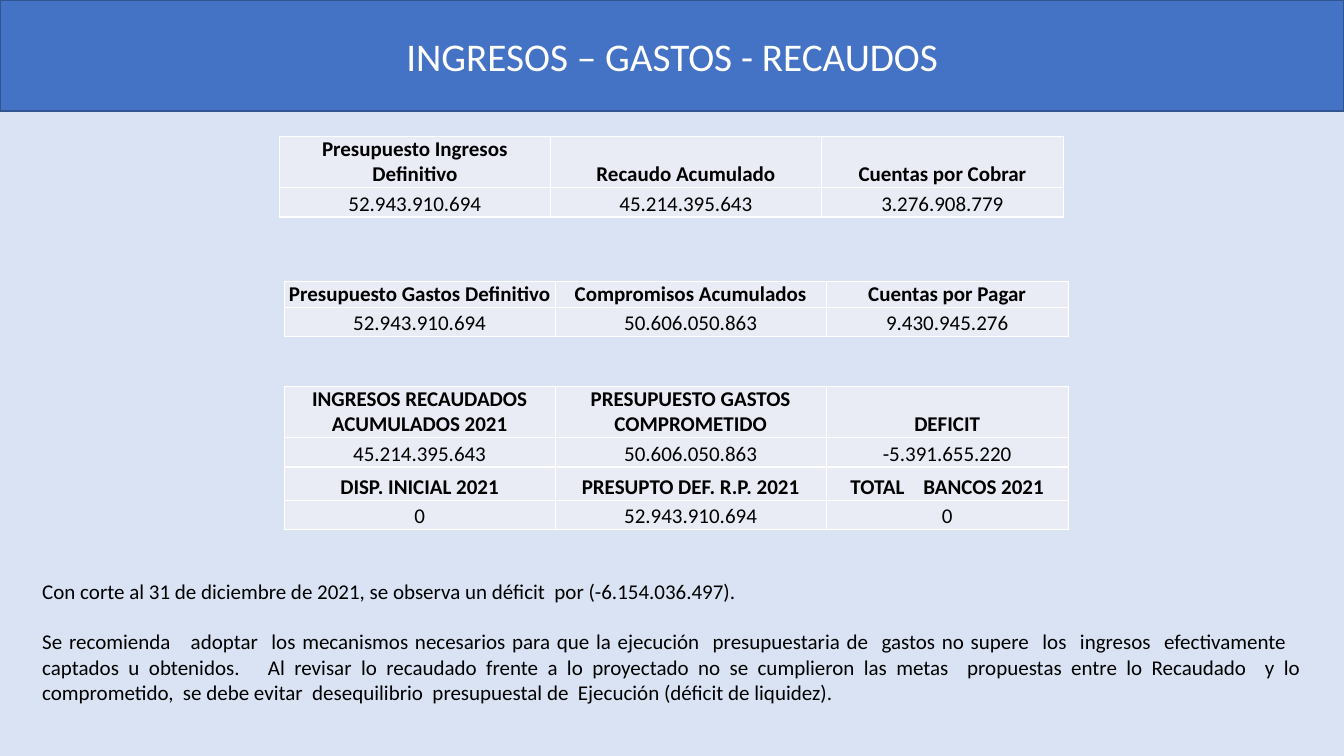
from lxml import etree
from pptx import Presentation
from pptx.dml.color import RGBColor
from pptx.enum.text import MSO_ANCHOR, MSO_AUTO_SIZE, PP_ALIGN
from pptx.oxml.ns import qn
from pptx.util import Cm, Pt

TITLE = "INGRESOS – GASTOS - RECAUDOS"
NOTES = [
    "Con corte al 31 de diciembre de 2021, se observa un déficit  por (-6.154.036.497).",
    "Se recomienda   adoptar  los mecanismos necesarios para que la ejecución  "
    "presupuestaria de  gastos no supere  los  ingresos  efectivamente   captados u "
    "obtenidos.   Al revisar lo recaudado frente a lo proyectado no se cumplieron las "
    "metas  propuestas entre lo Recaudado  y lo comprometido,  se debe evitar  "
    "desequilibrio  presupuestal de  Ejecución (déficit de liquidez).",
]
INCOME = [
    ("Presupuesto Ingresos Definitivo", "Recaudo Acumulado", "Cuentas por Cobrar"),
    ("52.943.910.694", "45.214.395.643", "3.276.908.779"),
]
EXPENSES = [
    ("Presupuesto Gastos Definitivo", "Compromisos Acumulados", "Cuentas por Pagar"),
    ("52.943.910.694", "50.606.050.863", "9.430.945.276"),
]
BALANCE = [
    ("INGRESOS RECAUDADOS ACUMULADOS 2021", "PRESUPUESTO GASTOS COMPROMETIDO", "DEFICIT"),
    ("45.214.395.643", "50.606.050.863", "-5.391.655.220"),
    ("DISP. INICIAL 2021", "PRESUPTO DEF. R.P. 2021", "TOTAL    BANCOS 2021"),
    ("0", "52.943.910.694", "0"),
]
TABLES = [
    (INCOME, 7.04, 3.43, (1.27, 0.74)),
    (EXPENSES, 7.16, 7.09, (0.64, 0.74)),
    (BALANCE, 7.16, 9.73, (1.27, 0.74, 0.84, 0.74)),
]
COLUMN_WIDTHS = (6.83, 6.83, 6.1)
PAGE_WIDTH, PAGE_HEIGHT = 33.87, 19.05

FONT = "Calibri"
BACKGROUND = RGBColor(0xDA, 0xE3, 0xF3)
BANNER = RGBColor(0x44, 0x72, 0xC4)
BANNER_EDGE = RGBColor(0x32, 0x54, 0x91)
CELL = RGBColor(0xE9, 0xEB, 0xF5)
WHITE = RGBColor(0xFF, 0xFF, 0xFF)
BLACK = RGBColor(0, 0, 0)
CENTER, JUSTIFY = PP_ALIGN.CENTER, PP_ALIGN.JUSTIFY
BOTTOM, MIDDLE, TOP = MSO_ANCHOR.BOTTOM, MSO_ANCHOR.MIDDLE, MSO_ANCHOR.TOP
NO_AUTOFIT = MSO_AUTO_SIZE.NONE


def place(box, left, top, width, height):
    box.left, box.top, box.width, box.height = map(Cm, (left, top, width, height))


def format_para(para, size, color, alignment, bold=False):
    para.alignment = alignment
    font = para.font
    font.name, font.size, font.bold = FONT, Pt(size), bold
    font.color.rgb = color


def add_borders(cell):
    properties = cell._tc.get_or_add_tcPr()
    for side in ("lnL", "lnR", "lnT", "lnB"):
        line = etree.SubElement(properties, qn(f"a:{side}"), w=str(Pt(1)))
        fill = etree.SubElement(line, qn("a:solidFill"))
        etree.SubElement(fill, qn("a:srgbClr"), val=str(WHITE))


def add_budget_table(page, rows, left, top, heights):
    frame = page.shapes.add_table(
        len(rows), len(COLUMN_WIDTHS), Cm(left), Cm(top),
        Cm(sum(COLUMN_WIDTHS)), Cm(sum(heights)))
    table = frame.table
    table.first_row = table.horz_banding = False
    for column, width in zip(table.columns, COLUMN_WIDTHS):
        column.width = Cm(width)
    for index, (row, height, texts) in enumerate(zip(table.rows, heights, rows)):
        row.height = Cm(height)
        for cell, text in zip(row.cells, texts):
            cell.text = text
            cell.vertical_anchor = BOTTOM
            cell.margin_left = cell.margin_right = 0
            cell.margin_top = cell.margin_bottom = 0
            format_para(cell.text_frame.paragraphs[0], 15, BLACK, CENTER, index % 2 == 0)
            add_borders(cell)
            cell.fill.solid()
            cell.fill.fore_color.rgb = CELL


def add_title(title):
    place(title, 0, 0, PAGE_WIDTH, 2.8)
    title.fill.solid()
    title.fill.fore_color.rgb = BANNER
    title.line.color.rgb = BANNER_EDGE
    title.line.width = Pt(1)
    title.text_frame.text = TITLE
    title.text_frame.vertical_anchor = MIDDLE
    title.text_frame.auto_size = NO_AUTOFIT
    format_para(title.text_frame.paragraphs[0], 28, WHITE, CENTER)


def add_notes(body):
    place(body, 0.81, 14.45, 32.23, 3.45)
    frame = body.text_frame
    frame.text = "\n".join(NOTES)
    frame.vertical_anchor = TOP
    frame.auto_size = NO_AUTOFIT
    for index, para in enumerate(frame.paragraphs):
        format_para(para, 15, BLACK, JUSTIFY)
        para.space_before = Pt(18 * index)
        properties = para._p.get_or_add_pPr()
        properties.set("marL", "0")
        properties.set("indent", "0")
        etree.SubElement(properties, qn("a:buNone"))
        properties.append(properties.find(qn("a:defRPr")))


def main():
    """Build the slide of income, expenses and collections."""
    deck = Presentation()
    deck.slide_width, deck.slide_height = Cm(PAGE_WIDTH), Cm(PAGE_HEIGHT)
    page = deck.slides.add_slide(deck.slide_layouts[1])
    page.background.fill.solid()
    page.background.fill.fore_color.rgb = BACKGROUND
    add_title(page.shapes.title)
    add_notes(page.placeholders[1])
    for rows, left, top, heights in TABLES:
        add_budget_table(page, rows, left, top, heights)
    deck.save("out.pptx")


if __name__ == "__main__":
    main()
